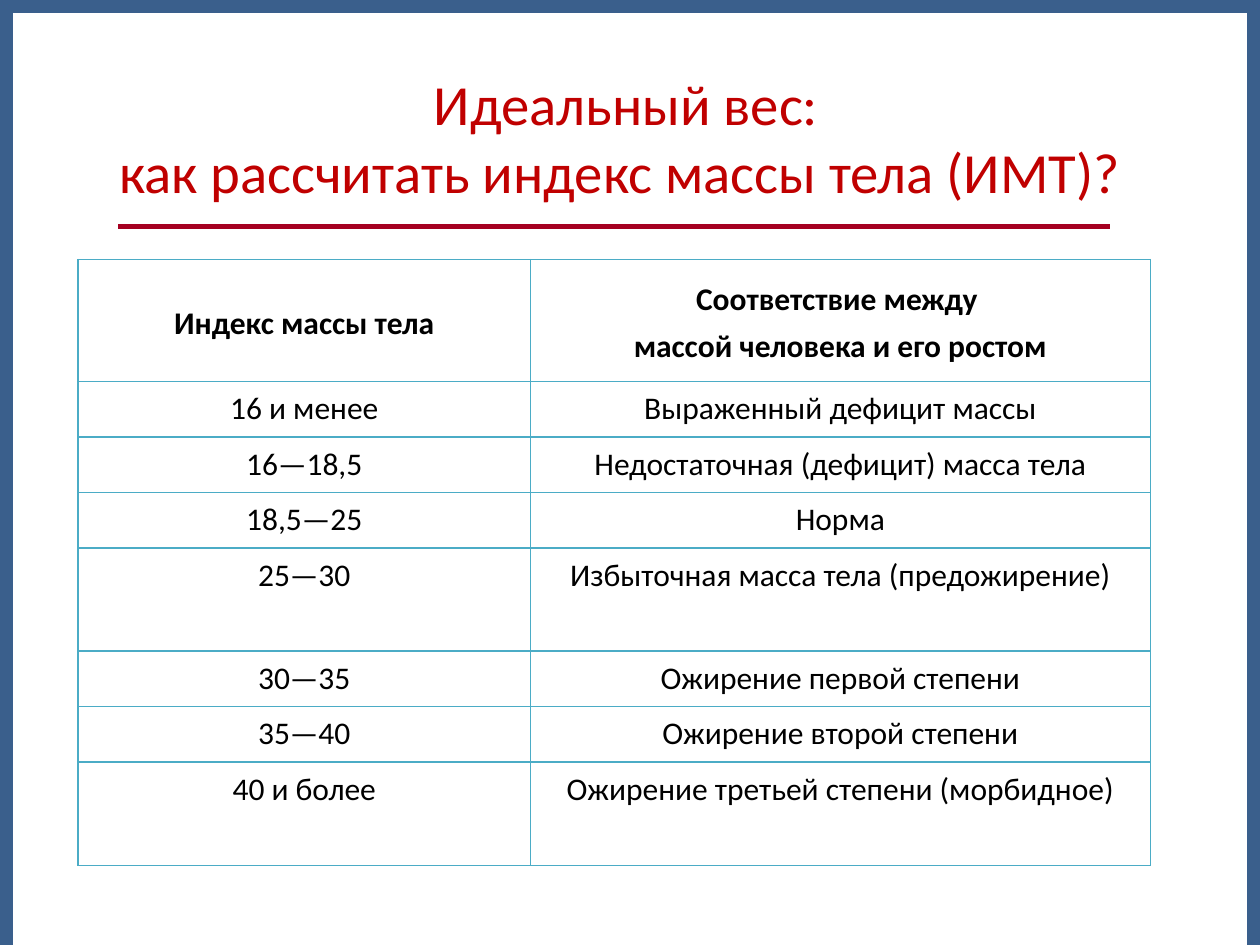
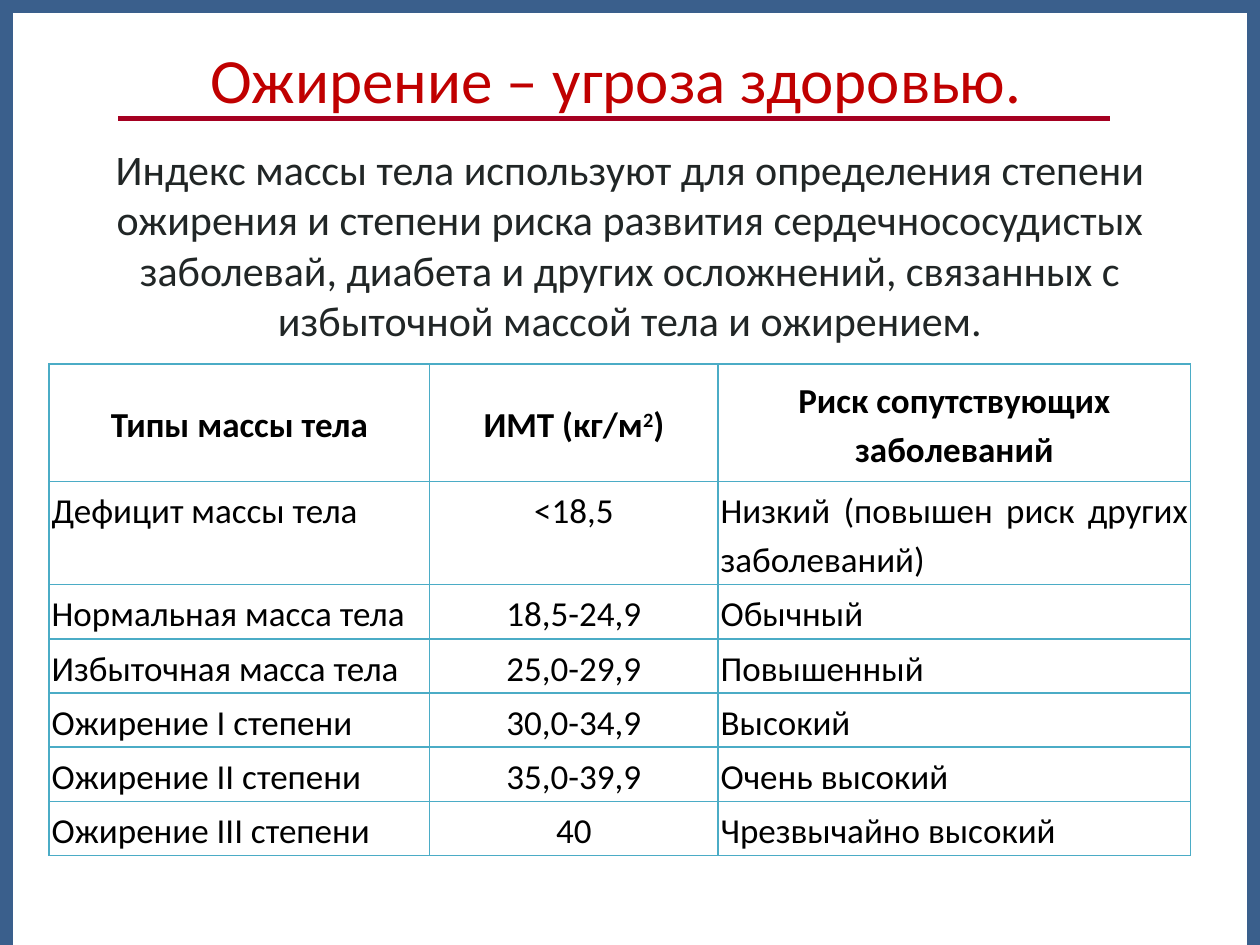
from dataclasses import dataclass

from lxml.etree import SubElement
from pptx import Presentation
from pptx.dml.color import RGBColor
from pptx.enum.shapes import MSO_CONNECTOR, MSO_SHAPE
from pptx.enum.text import MSO_ANCHOR, PP_ALIGN
from pptx.oxml.ns import qn
from pptx.util import Inches, Pt


# Theme: colours, font and type sizes
@dataclass(frozen=True)
class Theme:
    font: str = "Calibri"
    title: str = "C00000"
    rule: str = "A50021"
    frame: str = "3A5F8C"
    border: str = "4BACC6"
    body: str = "212626"
    cell: str = "000000"
    paper: str = "FFFFFF"
    title_long: float = 32.4
    title_short: float = 36
    body_size: float = 24
    rule_width: float = 3
    frame_width: float = 15.25
    border_width: float = 1


def rgb(color):
    return RGBColor.from_string(color)


def write(tf, text, *, font, size, color, bold=False, align=PP_ALIGN.CENTER,
          anchor=MSO_ANCHOR.MIDDLE, line=None, gap=None):
    """Newlines split paragraphs; ^marks^ enclose a superscript."""
    tf.word_wrap = True
    tf.vertical_anchor = anchor
    for i, content in enumerate(text.split("\n")):
        p = tf.add_paragraph() if i else tf.paragraphs[0]
        p.alignment = align
        if line:
            p.line_spacing = line
        if gap:
            p.space_before = p.space_after = Pt(gap)
        for j, part in enumerate(content.split("^")):
            r = p.add_run()
            r.text = part
            r.font.name, r.font.size, r.font.bold = font, Pt(size), bold
            r.font.color.rgb = rgb(color)
            if j % 2:
                r.font._element.set("baseline", "30000")


class Deck:
    def __init__(self, theme):
        self.theme = theme
        self.prs = Presentation()
        self.prs.slide_width, self.prs.slide_height = Inches(10), Inches(7.5)
        self.slide = None

    def new_slide(self, title, box, size, rule_y):
        """Start a slide with its title, rule and frame."""
        self.slide = self.prs.slides.add_slide(self.prs.slide_layouts[6])
        fill = self.slide.background.fill
        fill.solid()
        fill.fore_color.rgb = rgb(self.theme.paper)
        self.text(title, box, size=size, color=self.theme.title)
        self.rule(rule_y)
        self.frame()

    def text(self, text, box, **style):
        sp = self.slide.shapes.add_textbox(*map(Inches, box))
        write(sp.text_frame, text, font=self.theme.font, **style)

    def rule(self, y):
        sp = self.slide.shapes.add_connector(
            MSO_CONNECTOR.STRAIGHT, Inches(0.94), Inches(y), Inches(8.81), Inches(y))
        sp.line.color.rgb = rgb(self.theme.rule)
        sp.line.width = Pt(self.theme.rule_width)
        SubElement(sp._element.spPr, qn("a:effectLst"))

    def frame(self):
        sp = self.slide.shapes.add_shape(
            MSO_SHAPE.RECTANGLE, 0, 0, Inches(10), Inches(7.66))
        sp.shadow.inherit = False
        sp.fill.background()
        sp.line.color.rgb = rgb(self.theme.frame)
        sp.line.width = Pt(self.theme.frame_width)

    def table(self, rows, left, top, widths, heights, size, aligns):
        """First row is the header; aligns apply to the columns below it."""
        shape = self.slide.shapes.add_table(
            len(rows), len(widths), Inches(left), Inches(top),
            Inches(sum(widths)), Inches(sum(heights)))
        table = shape.table
        for column, width in zip(table.columns, widths):
            column.width = Inches(width)
        for i, (row, height) in enumerate(zip(rows, heights)):
            table.rows[i].height = Inches(height)
            for j, text in enumerate(row):
                self.cell(table.cell(i, j), text, size, i == 0, aligns[j])

    def cell(self, cell, text, size, header, align):
        inset = Inches(0.07 if header else 0.02)
        cell.margin_left = cell.margin_right = inset
        cell.margin_top = cell.margin_bottom = inset
        cell.vertical_anchor = MSO_ANCHOR.MIDDLE if header else MSO_ANCHOR.TOP
        write(cell.text_frame, text, font=self.theme.font, size=size,
              color=self.theme.cell, bold=header, anchor=None,
              align=PP_ALIGN.CENTER if header else align, line=1.15, gap=0.8)
        # Borders come before the fill in the cell properties
        cell_pr = cell._tc.get_or_add_tcPr()
        for side in ("lnL", "lnR", "lnT", "lnB"):
            ln = SubElement(cell_pr, qn(f"a:{side}"),
                            w=str(Pt(self.theme.border_width)))
            solid = SubElement(ln, qn("a:solidFill"))
            SubElement(solid, qn("a:srgbClr"), val=self.theme.border)
        cell.fill.background()


INDEX_ROWS = [
    ("Индекс массы тела", "Соответствие между \nмассой человека и его ростом"),
    ("16 и менее", "Выраженный дефицит массы"),
    ("16—18,5", "Недостаточная (дефицит) масса тела"),
    ("18,5—25", "Норма"),
    ("25—30", "Избыточная масса тела (предожирение)"),
    ("30—35", "Ожирение первой степени"),
    ("35—40", "Ожирение второй степени"),
    ("40 и более", "Ожирение третьей степени (морбидное)"),
]

RISK_ROWS = [
    ("Типы массы тела", "ИМТ (кг/м^2^)", "Риск сопутствующих заболеваний"),
    ("Дефицит массы тела", "<18,5", "Низкий (повышен риск других заболеваний)"),
    ("Нормальная масса тела", "18,5-24,9", "Обычный"),
    ("Избыточная масса тела", "25,0-29,9", "Повышенный"),
    ("Ожирение I степени", "30,0-34,9", "Высокий"),
    ("Ожирение II степени", "35,0-39,9", "Очень высокий"),
    ("Ожирение III степени", "40", "Чрезвычайно высокий"),
]

RISK_TEXT = (
    "Индекс массы тела используют для определения степени ожирения и степени "
    "риска развития сердечнососудистых заболевай, диабета и других осложнений, "
    "связанных с избыточной массой тела и ожирением."
)


def main():
    theme = Theme()
    deck = Deck(theme)
    center, justify = PP_ALIGN.CENTER, PP_ALIGN.JUSTIFY

    # Slide 1: body mass index scale
    deck.new_slide(" Идеальный вес: \nкак рассчитать индекс массы тела (ИМТ)? ",
                   (0.47, 0.46, 9, 1.25), theme.title_long, rule_y=1.8)
    low, tall = 0.44, 0.82
    deck.table(INDEX_ROWS, 0.62, 2.06, widths=(3.59, 4.92),
               heights=(0.97, low, low, low, tall, low, low, tall),
               size=18, aligns=(center, center))

    # Slide 2: health risk by body mass type
    deck.new_slide("Ожирение – угроза здоровью.",
                   (0.39, 0.23, 9, 0.78), theme.title_short, rule_y=0.94)
    deck.table(RISK_ROWS, 0.39, 2.89, widths=(3.02, 2.29, 3.75),
               heights=(0.93, 0.82, *[0.43] * 5),
               size=20, aligns=(justify, center, justify))
    deck.text(RISK_TEXT, (0.47, 1.09, 9.06, 2.12), size=theme.body_size,
              color=theme.body, anchor=MSO_ANCHOR.TOP)

    deck.prs.save("out.pptx")


if __name__ == "__main__":
    main()
